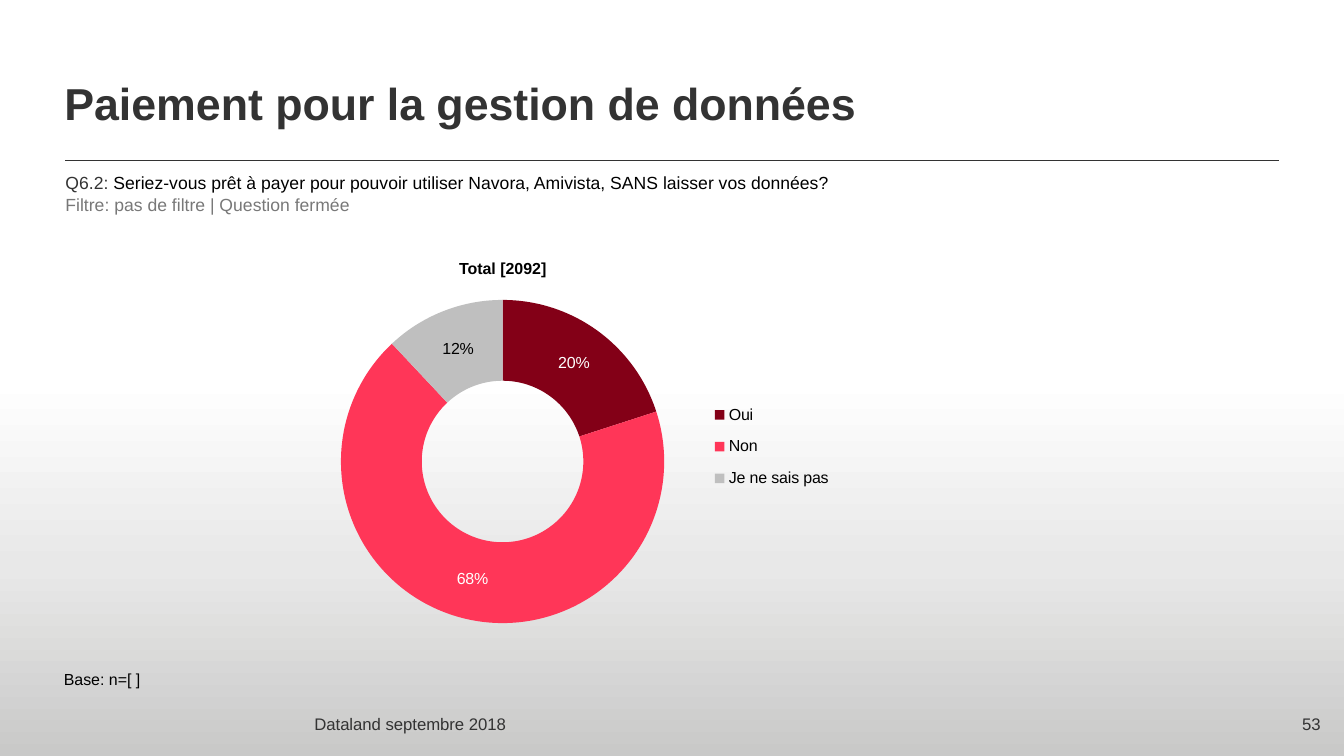
from copy import deepcopy

from lxml.etree import SubElement
from pptx import Presentation
from pptx.chart.data import CategoryChartData
from pptx.dml.color import RGBColor
from pptx.enum.chart import XL_CHART_TYPE, XL_LEGEND_POSITION
from pptx.enum.shapes import MSO_CONNECTOR, MSO_SHAPE
from pptx.enum.text import MSO_ANCHOR, PP_ALIGN
from pptx.oxml.ns import qn
from pptx.util import Pt

FONT = "Arial"
BLACK = RGBColor(0x00, 0x00, 0x00)
WHITE = RGBColor(0xFF, 0xFF, 0xFF)
DARK_GREY = RGBColor(0x33, 0x33, 0x33)
MID_GREY = RGBColor(0x78, 0x78, 0x78)
BURGUNDY = RGBColor(0x83, 0x00, 0x17)
PINK = RGBColor(0xFF, 0x36, 0x58)
LIGHT_GREY = RGBColor(0xBF, 0xBF, 0xBF)
GRADIENT_COLORS = [RGBColor(0xC9, 0xC9, 0xC8), RGBColor(0xE8, 0xE8, 0xE8), WHITE]

WIDTH, HEIGHT = 841.6, 473.5
MARGIN = 41
CHART_WIDTH, CHART_HEIGHT = 575.3, 262.8


def write_text(shape, lines, size, anchor=MSO_ANCHOR.TOP, align=PP_ALIGN.LEFT,
               insets=(0, 0), bold=False):
    """Fill a shape with lines, each a list of (text, colour) runs."""
    frame = shape.text_frame
    frame.word_wrap = True
    frame.vertical_anchor = anchor
    frame.margin_left = frame.margin_right = Pt(insets[0])
    frame.margin_top = frame.margin_bottom = Pt(insets[1])
    for index, line in enumerate(lines):
        paragraph = frame.add_paragraph() if index else frame.paragraphs[0]
        paragraph.alignment = align
        for text, color in line:
            run = paragraph.add_run()
            run.text = text
            run.font.name = FONT
            run.font.size = Pt(size)
            run.font.bold = bold
            run.font.color.rgb = color


def set_layout(layout, left, top, width, height, target=None):
    """Place a chart part by hand, in points from the chart's corner."""
    for child in list(layout):
        layout.remove(child)
    manual = SubElement(layout, qn("c:manualLayout"))
    settings = [("layoutTarget", target), ("xMode", "edge"), ("yMode", "edge"),
                ("x", left / CHART_WIDTH), ("y", top / CHART_HEIGHT),
                ("w", width / CHART_WIDTH), ("h", height / CHART_HEIGHT)]
    for name, value in settings:
        if value is not None:
            SubElement(manual, qn(f"c:{name}")).set("val", str(value))


presentation = Presentation()
presentation.slide_width = Pt(WIDTH)
presentation.slide_height = Pt(HEIGHT)
slide = presentation.slides.add_slide(presentation.slide_layouts[5])
shapes = slide.shapes

# Grey fade over the lower half
fade = shapes.add_shape(MSO_SHAPE.RECTANGLE, 0, Pt(HEIGHT / 2), Pt(WIDTH), Pt(HEIGHT / 2))
fade.shadow.inherit = False
fade.line.fill.background()
fade.fill.gradient()
fade.fill.gradient_angle = 90
stop_list = fade.element.spPr.find(qn("a:gradFill")).find(qn("a:gsLst"))
stop_list.insert(1, deepcopy(stop_list[0]))
for index, (stop, color) in enumerate(zip(fade.fill.gradient_stops, GRADIENT_COLORS)):
    stop.position = index / 2
    stop.color.rgb = color

# Title and rule
title = shapes.title
title.left, title.top, title.width, title.height = Pt(40.3), Pt(47), Pt(760), Pt(34)
write_text(title, [[("Paiement pour la gestion de données", DARK_GREY)]], 28,
           anchor=MSO_ANCHOR.BOTTOM, bold=True)

rule = shapes.add_connector(MSO_CONNECTOR.STRAIGHT, Pt(MARGIN), Pt(100.6), Pt(800.8), Pt(100.6))
rule.line.color.rgb = DARK_GREY
rule.line.width = Pt(0.5)
SubElement(rule.element.spPr, qn("a:effectLst"))

# Doughnut chart
chart_data = CategoryChartData(number_format="0%")
chart_data.categories = ["Oui", "Non", "Je ne sais pas"]
chart_data.add_series("Series 1", (0.2, 0.68, 0.12))
chart = shapes.add_chart(XL_CHART_TYPE.DOUGHNUT, Pt(40.3), Pt(140.2), Pt(CHART_WIDTH),
                         Pt(CHART_HEIGHT), chart_data).chart
chart.has_title = False
chart.font.name = FONT
chart.font.size = Pt(18)
chart.font.color.rgb = BLACK

chart.has_legend = True
legend = chart.legend
legend.position = XL_LEGEND_POSITION.BOTTOM
legend.include_in_layout = False
legend.font.name = FONT
legend.font.size = Pt(10)
legend.font.color.rgb = BLACK

plot = chart.plots[0]
plot.vary_by_categories = True
series = plot.series[0]
labels = series.data_labels
labels.show_value = True
labels.show_percentage = False
labels.number_format = "0%"
labels.number_format_is_linked = False
labels.font.name = FONT
labels.font.size = Pt(10)
labels.font.color.rgb = WHITE

for index, color in enumerate((BURGUNDY, PINK, LIGHT_GREY)):
    slice_format = series.points[index].format
    slice_format.fill.solid()
    slice_format.fill.fore_color.rgb = color
    slice_format.line.fill.background()
unsure_font = series.points[2].data_label.font
unsure_font.name = FONT
unsure_font.size = Pt(10)
unsure_font.color.rgb = BLACK

chart_element = chart.element.find(qn("c:chart"))
plot_area = chart_element.find(qn("c:plotArea"))
plot_area.find(qn("c:doughnutChart")).find(qn("c:holeSize")).set("val", "62")
plot_layout = plot_area.find(qn("c:layout"))
if plot_layout is None:
    plot_layout = plot_area.makeelement(qn("c:layout"))
    plot_area.insert(0, plot_layout)
set_layout(plot_layout, 173.2, 47.6, 202.5, 202.6, target="inner")

legend_element = chart_element.find(qn("c:legend"))
legend_layout = legend_element.find(qn("c:layout"))
if legend_layout is None:
    legend_layout = legend_element.makeelement(qn("c:layout"))
    legend_element.find(qn("c:legendPos")).addnext(legend_layout)
set_layout(legend_layout, 397, 105.4, 92, 68.3)

# Question, chart heading, base and footer
question = [
    [("Q6.2: ", DARK_GREY),
     ("Seriez-vous prêt à payer pour pouvoir utiliser Navora, Amivista, SANS laisser vos données?", BLACK)],
    [("Filtre: pas de filtre | Question fermée", MID_GREY)],
]
LEFT, CENTER = PP_ALIGN.LEFT, PP_ALIGN.CENTER
TOP, MIDDLE, BOTTOM = MSO_ANCHOR.TOP, MSO_ANCHOR.MIDDLE, MSO_ANCHOR.BOTTOM
text_boxes = [
    ((MARGIN, 108, 759.6, 26.6), question, 11, TOP, LEFT, (0, 0), False),
    ((260.8, 158.4, 108, 19.4), [[("Total [2092]", BLACK)]], 10, TOP, CENTER, (7.2, 3.6), True),
    ((32.9, 419, 768.2, 12.2), [[("Base: n=[ ]", BLACK)]], 10, BOTTOM, LEFT, (7.2, 0), False),
    ((189.8, 443.8, 304.6, 20.2), [[("Dataland septembre 2018", DARK_GREY)]], 10.5, TOP, LEFT,
     (7.2, 3.6), False),
    ((810.7, 446.7, 20.9, 13), [[("53", DARK_GREY)]], 10.5, MIDDLE, CENTER, (0, 0), False),
]
for box, lines, size, anchor, align, insets, bold in text_boxes:
    text_box = shapes.add_textbox(*(Pt(length) for length in box))
    write_text(text_box, lines, size, anchor, align, insets, bold)

presentation.save("out.pptx")
